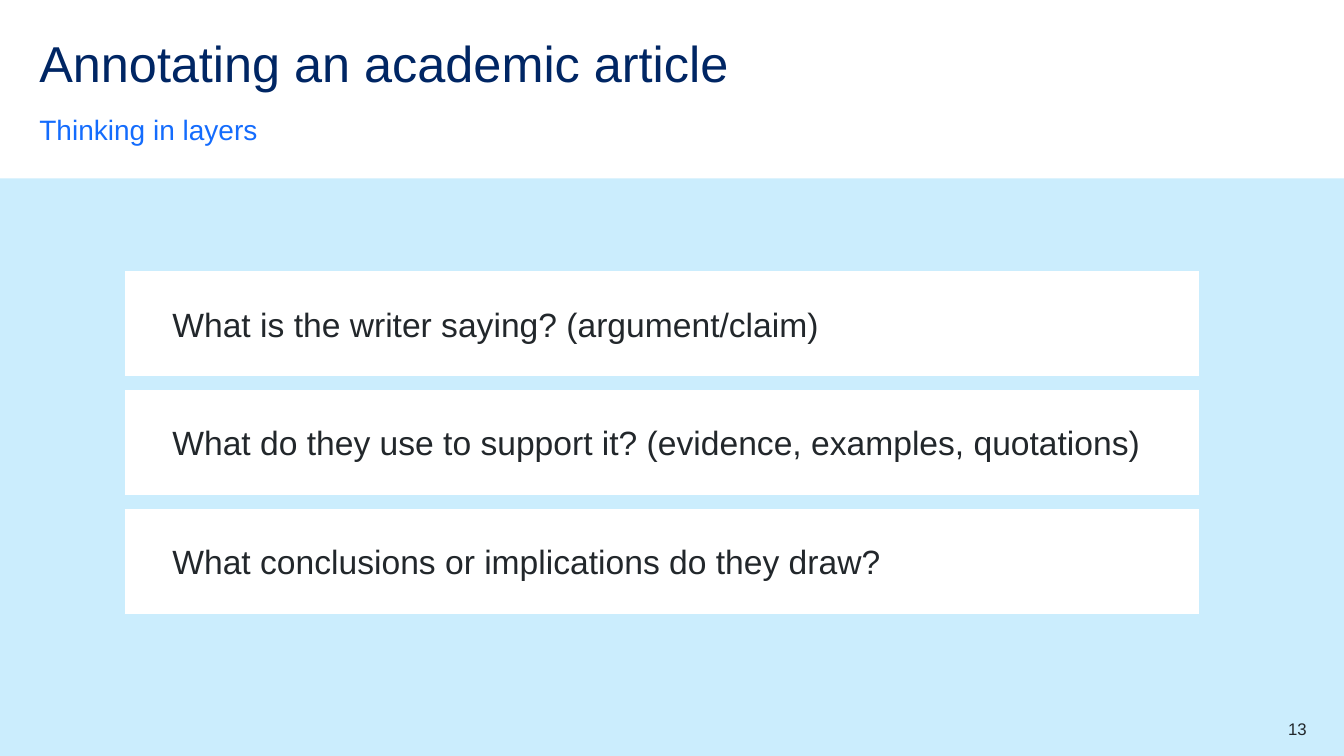
from pptx import Presentation
from pptx.dml.color import RGBColor
from pptx.enum import shapes, text
from pptx.util import Inches, Pt

COLOURS = {
    "navy": "002664",
    "blue": "146CFD",
    "pale": "CBEDFD",
    "white": "FFFFFF",
    "ink": "22272B",
}
QUESTIONS = [
    "What is the writer saying? (argument/claim)",
    "What do they use to support it? (evidence, examples, quotations)",
    "What conclusions or implications do they draw?",
]
CARD_TOP, CARD_STEP = 2.69, 1.18


def colour(name):
    """Return the named colour."""
    return RGBColor.from_string(COLOURS[name])


def write(box, words, size, ink, anchor, margins=(0, 0, 0, 0), align=text.PP_ALIGN.LEFT):
    """Write one styled paragraph in a box and return it."""
    frame = box.text_frame
    frame.word_wrap = True
    frame.vertical_anchor = anchor
    frame.margin_left, frame.margin_top, frame.margin_right, frame.margin_bottom = map(Inches, margins)
    para = frame.paragraphs[0]
    para.text = words
    para.alignment = align
    para.font.name = "Arial"
    para.font.size = Pt(size)
    para.font.color.rgb = colour(ink)
    return para


def add_text(page, place, words, size, ink, anchor=text.MSO_ANCHOR.TOP, align=text.PP_ALIGN.LEFT):
    """Add a text box without margins and return its paragraph."""
    box = page.shapes.add_textbox(*map(Inches, place))
    return write(box, words, size, ink, anchor, align=align)


def add_panel(page, place, fill):
    """Add a plain filled rectangle."""
    panel = page.shapes.add_shape(shapes.MSO_SHAPE.RECTANGLE, *map(Inches, place))
    panel.shadow.inherit = False
    panel.fill.solid()
    panel.fill.fore_color.rgb = colour(fill)
    panel.line.fill.background()
    return panel


def main():
    """Build the slide and save it."""
    deck = Presentation()
    deck.slide_width, deck.slide_height = Inches(13.33), Inches(7.5)
    page = deck.slides.add_slide(deck.slide_layouts[6])

    add_panel(page, (0, 1.77, 13.33, 5.73), "pale")
    title = add_text(page, (0.39, 0.39, 11.22, 0.57), "Annotating an academic article", 36, "navy")
    title.line_spacing = 0.9
    subtitle = add_text(page, (0.39, 1.11, 11.02, 0.34), "Thinking in layers", 20, "blue",
                        text.MSO_ANCHOR.BOTTOM)
    subtitle.line_spacing = 1.5
    subtitle.space_after = Pt(12)

    for row, question in enumerate(QUESTIONS):
        card = add_panel(page, (1.24, CARD_TOP + row * CARD_STEP, 10.65, 1.04), "white")
        write(card, question, 24, "ink", text.MSO_ANCHOR.MIDDLE, (0.47, 0.05, 0.1, 0.05))

    add_text(page, (12.17, 7.13, 0.79, 0.2), "13", 12, "ink", align=text.PP_ALIGN.RIGHT)
    deck.save("out.pptx")


if __name__ == "__main__":
    main()
